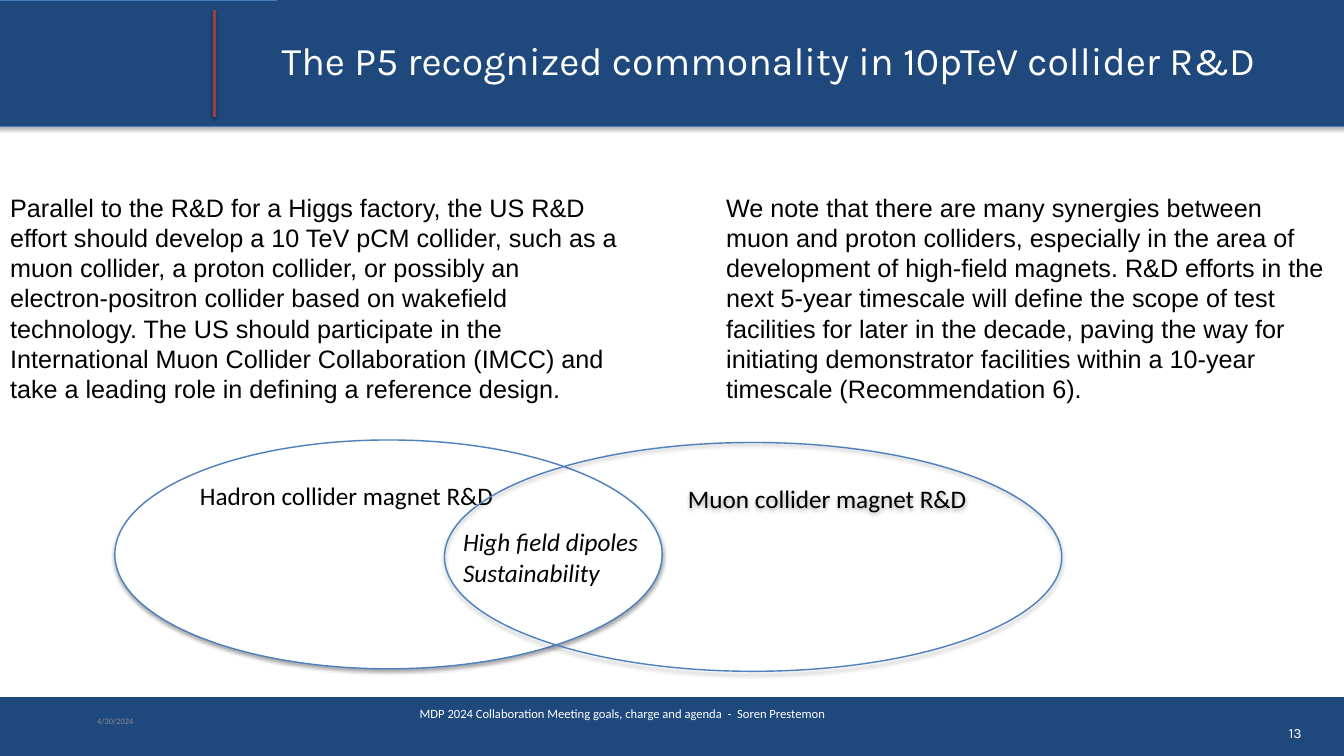
from dataclasses import dataclass, field
from typing import Optional

from lxml.etree import SubElement
from pptx import Presentation
from pptx.dml.color import RGBColor
from pptx.enum.shapes import MSO_CONNECTOR, MSO_SHAPE
from pptx.enum.text import MSO_ANCHOR, MSO_AUTO_SIZE, PP_ALIGN
from pptx.oxml.ns import qn
from pptx.util import Emu, Inches, Pt

NAVY, BLUE, RED = "1F497D", "4F81BD", "9A403E"
WHITE, BLACK, GREY = "FFFFFF", "000000", "8C8C8C"


@dataclass
class Frame:
    left: float
    top: float
    width: float
    height: float

    def lengths(self) -> list[Emu]:
        return [Inches(value) for value in (self.left, self.top, self.width, self.height)]


@dataclass
class Style:
    font: str
    size: float
    color: str = BLACK
    italic: bool = False
    align: PP_ALIGN = PP_ALIGN.LEFT
    anchor: MSO_ANCHOR = MSO_ANCHOR.TOP
    inset: float = 0.1
    vertical_inset: float = 0.1
    wrap: bool = True


@dataclass
class Label:
    frame: Frame
    lines: list[str]
    style: Style


@dataclass
class Panel:
    frame: Frame
    shape: MSO_SHAPE
    fill: Optional[str] = None
    line: Optional[str] = None
    line_width: float = 1
    shadow: int = 0
    lines: list[str] = field(default_factory=list)
    style: Optional[Style] = None


def color(value: str) -> RGBColor:
    return RGBColor.from_string(value)


def set_format(target, values: dict) -> None:
    for name, value in values.items():
        setattr(target, name, value)


def place(shape, frame: Frame) -> None:
    set_format(shape, dict(zip(("left", "top", "width", "height"), frame.lengths())))


def set_shadow(shape, opacity: int) -> None:
    effects = SubElement(shape._element.spPr, qn("a:effectLst"))
    if opacity:
        shadow = SubElement(effects, qn("a:outerShdw"), blurRad=str(Pt(6)), dist=str(Pt(3)),
                            dir="5400000", rotWithShape="0")
        shade = SubElement(shadow, qn("a:srgbClr"), val=BLACK)
        SubElement(shade, qn("a:alpha"), val=str(opacity * 1000))


def write(shape, lines: list[str], style: Style, plain: bool = False) -> None:
    frame = shape.text_frame
    set_format(frame, {
        "text": "\n".join(lines), "word_wrap": style.wrap, "auto_size": MSO_AUTO_SIZE.NONE,
        "vertical_anchor": style.anchor,
        "margin_left": Inches(style.inset), "margin_right": Inches(style.inset),
        "margin_top": Inches(style.vertical_inset), "margin_bottom": Inches(style.vertical_inset),
    })
    for para in frame.paragraphs:
        set_format(para, {"alignment": style.align, "space_before": Pt(0)})
        if plain:
            properties = para._p.get_or_add_pPr()
            properties.set("marL", "0")
            properties.set("indent", "0")
            SubElement(properties, qn("a:buNone"))
        for span in para.runs:
            set_format(span.font, {"name": style.font, "size": Pt(style.size),
                                   "italic": style.italic})
            span.font.color.rgb = color(style.color)


def draw_panel(page, panel: Panel):
    shape = page.shapes.add_shape(panel.shape, *panel.frame.lengths())
    if panel.fill:
        shape.fill.solid()
        shape.fill.fore_color.rgb = color(panel.fill)
    else:
        shape.fill.background()
    if panel.line:
        shape.line.color.rgb = color(panel.line)
        shape.line.width = Pt(panel.line_width)
    else:
        shape.line.fill.background()
    set_shadow(shape, panel.shadow)
    if panel.style:
        write(shape, panel.lines, panel.style)
    return shape


def draw_divider(page):
    divider = page.shapes.add_connector(MSO_CONNECTOR.STRAIGHT, Inches(4.25), Inches(2.33),
                                        Inches(4.25), Inches(0.2))
    divider.line.color.rgb = color(RED)
    divider.line.width = Pt(4)
    set_shadow(divider, 38)
    return divider


def draw_label(page, label: Label) -> None:
    box = page.shapes.add_textbox(*label.frame.lengths())
    write(box, label.lines, label.style)


MIDDLE = MSO_ANCHOR.MIDDLE
TITLE = Style("Karla", 56, WHITE, anchor=MIDDLE)
BODY = Style("Arial", 36, vertical_inset=0.05)

BANDS = [
    Panel(Frame(-0.04, 13.83, 26.74, 1.19), MSO_SHAPE.RECTANGLE, NAVY),
    Panel(Frame(-0.07, 0, 26.79, 2.5), MSO_SHAPE.RECTANGLE, NAVY, "4A7EBB", 1, 35),
]
COLUMNS = [
    Label(Frame(0.1, 3.76, 12.25, 4.34), [
        "Parallel to the R&D for a Higgs factory, the US R&D effort should develop a 10 TeV pCM "
        "collider, such as a muon collider, a proton collider, or possibly an electron-positron "
        "collider based on wakefield technology. The US should participate in the International "
        "Muon Collider Collaboration (IMCC) and take a leading role in defining a reference "
        "design."], BODY),
    Label(Frame(14.31, 3.76, 12.15, 4.39), [
        "We note that there are many synergies between muon and proton colliders, especially in "
        "the area of development of high-field magnets. R&D efforts in the next 5-year timescale "
        "will define the scope of test facilities for later in the decade, paving the way for "
        "initiating demonstrator facilities within a 10-year timescale (Recommendation 6)."],
        BODY),
]
ELLIPSES = [
    Panel(Frame(2.28, 8.73, 10.86, 4.54), MSO_SHAPE.OVAL, WHITE, BLUE, 2, 35,
          ["Hadron collider magnet R&D"], Style("Calibri", 36, vertical_inset=0.14)),
    Panel(Frame(8.82, 8.78, 12.25, 4.54), MSO_SHAPE.OVAL, None, BLUE, 2, 35,
          ["Muon collider magnet R&D"],
          Style("Calibri", 36, align=PP_ALIGN.RIGHT, vertical_inset=0.14)),
]
LABELS = [
    Label(Frame(9.09, 10.35, 3.83, 1.41), ["High field dipoles", "Sustainability"],
          Style("Calibri", 36, italic=True)),
    Label(Frame(1.83, 13.9, 6, 0.8), ["4/30/2024"],
          Style("Calibri", 12, GREY, anchor=MIDDLE, vertical_inset=0.05)),
    Label(Frame(8.23, 13.9, 15.36, 0.5),
          ["MDP 2024 Collaboration Meeting goals, charge and agenda  -  Soren Prestemon"],
          Style("Calibri", 18, WHITE, anchor=MIDDLE, vertical_inset=0.05)),
    Label(Frame(25.4, 14.28, 0.53, 0.51), ["13"],
          Style("Karla", 20, WHITE, align=PP_ALIGN.RIGHT, anchor=MIDDLE, wrap=False)),
]


def main() -> None:
    deck = Presentation()
    set_format(deck, {"slide_width": Inches(26.67), "slide_height": Inches(15)})
    page = deck.slides.add_slide(deck.slide_layouts[3])
    title, *bodies = page.placeholders

    backdrop = [draw_panel(page, band) for band in BANDS] + [draw_divider(page)]
    for shape in backdrop:
        title._element.addprevious(shape._element)

    place(title, Frame(5.49, -0.03, 21.21, 2.42))
    title.fill.solid()
    title.fill.fore_color.rgb = color(NAVY)
    write(title, ["The P5 recognized commonality in 10pTeV collider R&D"], TITLE)
    for body, column in zip(bodies, COLUMNS):
        place(body, column.frame)
        write(body, column.lines, column.style, plain=True)
    for ellipse in ELLIPSES:
        draw_panel(page, ellipse)
    for label in LABELS:
        draw_label(page, label)
    deck.save("out.pptx")


if __name__ == "__main__":
    main()
